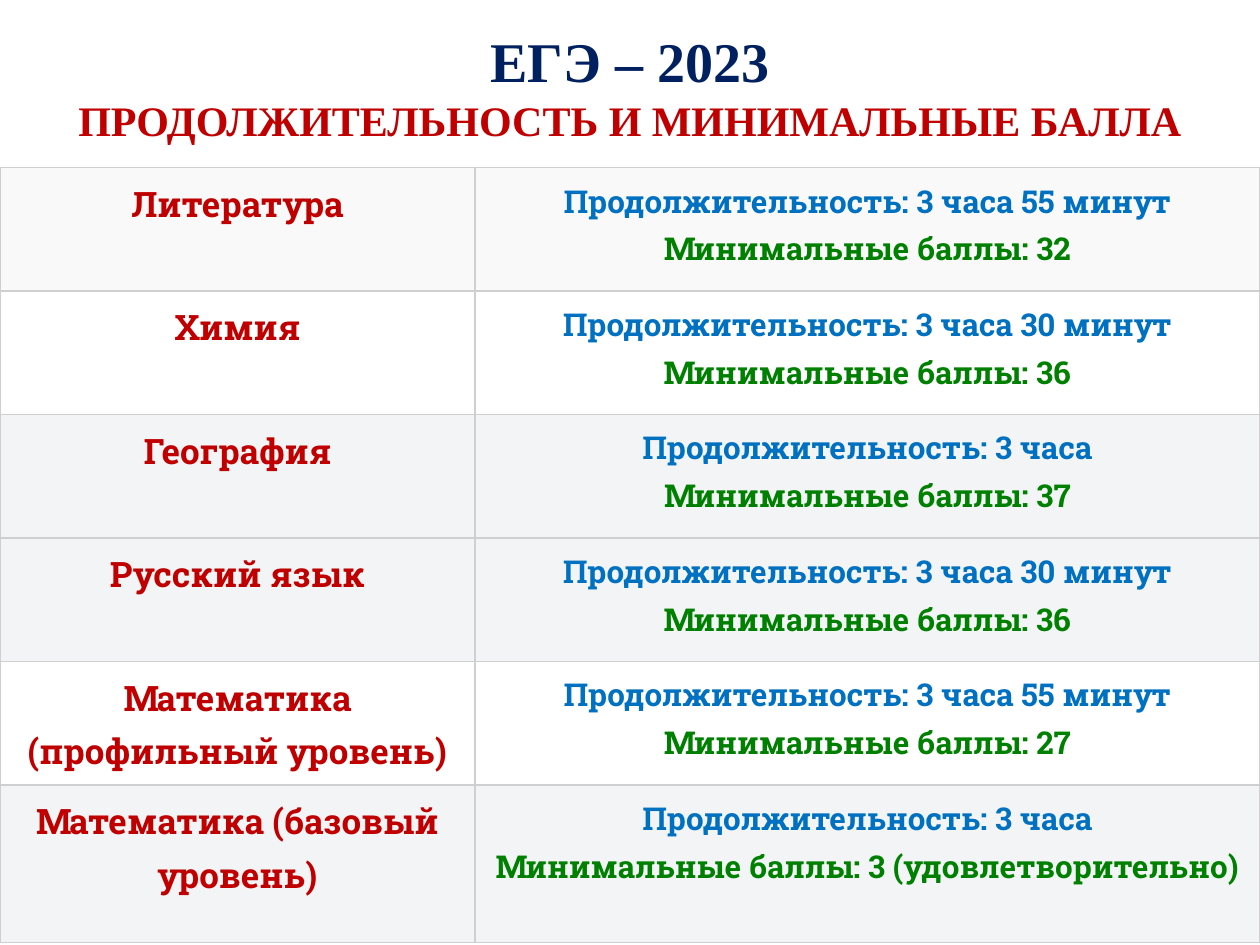
import dataclasses

import pptx
import pptx.dml.color
import pptx.enum.text
import pptx.oxml
import pptx.oxml.ns
import pptx.util

Inches = pptx.util.Inches
Pt = pptx.util.Pt

RED = "C00000"
BLUE = "0070C0"
GREEN = "008000"
NAVY = "002060"
GRID = "CFCFCF"
PALE = "F9F9FA"
WHITE = "FFFFFF"
GREY = "F3F4F5"
SLAB = "Roboto Slab"
SERIF = "Times New Roman"


@dataclasses.dataclass
class Exam:
    name: str
    time: str
    score: str
    fill: str


EXAMS = [
    Exam("Литература", "3 часа 55 минут", "32", PALE),
    Exam("Химия", "3 часа 30 минут", "36", WHITE),
    Exam("География", "3 часа", "37", GREY),
    Exam("Русский язык", "3 часа 30 минут", "36", GREY),
    Exam("Математика\n(профильный уровень)", "3 часа 55 минут", "27", WHITE),
    Exam("Математика (базовый уровень)", "3 часа", "3 (удовлетворительно)", GREY),
]


def color(code: str) -> pptx.dml.color.RGBColor:
    return pptx.dml.color.RGBColor.from_string(code)


def style(run, size: int, face: str, code: str) -> None:
    run.font.size = Pt(size)
    run.font.name = face
    run.font.bold = True
    run.font.color.rgb = color(code)


def border(cell, side: str, width: float) -> None:
    line = pptx.oxml.parse_xml(
        f'<a:ln{side} {pptx.oxml.ns.nsdecls("a")} w="{Pt(width)}">'
        f'<a:solidFill><a:srgbClr val="{GRID}"/></a:solidFill></a:ln{side}>'
    )
    cell._tc.get_or_add_tcPr().append(line)


def fill_cell(cell, text: str, size: int, codes: list[str], back: str, right: float) -> None:
    for side, width in (("L", 1), ("R", right), ("T", 1), ("B", 1)):
        border(cell, side, width)
    cell.fill.solid()
    cell.fill.fore_color.rgb = color(back)
    cell.margin_left = cell.margin_right = Inches(0.05)
    cell.margin_top = cell.margin_bottom = Inches(0.05)
    cell.text_frame.text = text
    for para in cell.text_frame.paragraphs:
        para.alignment = pptx.enum.text.PP_ALIGN.CENTER
        para.line_spacing = 1.15
        for run, code in zip(para.runs, codes):
            style(run, size, SLAB, code)


def add_title(slide) -> None:
    title = slide.shapes.title
    title.left, title.top = Inches(0.31), Inches(0.16)
    title.width, title.height = Inches(9.38), Inches(1.04)
    frame = title.text_frame
    frame.text = "ЕГЭ – 2023\nПРОДОЛЖИТЕЛЬНОСТЬ И МИНИМАЛЬНЫЕ БАЛЛА"
    frame.word_wrap = True
    frame.auto_size = pptx.enum.text.MSO_AUTO_SIZE.SHAPE_TO_FIT_TEXT
    frame.vertical_anchor = pptx.enum.text.MSO_ANCHOR.MIDDLE
    for para, size, code in zip(frame.paragraphs, (32, 24), (NAVY, RED)):
        para.alignment = pptx.enum.text.PP_ALIGN.CENTER
        style(para.runs[0], size, SERIF, code)


def add_exams(slide) -> None:
    table = slide.shapes.add_table(
        len(EXAMS), 2, 0, Inches(1.33), Inches(10), Inches(6.17)
    ).table
    table.columns[0].width = Inches(3.77)
    table.columns[1].width = Inches(6.23)
    for index, exam in enumerate(EXAMS):
        last = index == len(EXAMS) - 1
        table.rows[index].height = Inches(1.25 if last else 0.98)
        facts = f"Продолжительность: {exam.time}\vМинимальные баллы: {exam.score}"
        fill_cell(table.cell(index, 0), exam.name, 20, [RED], exam.fill, 1)
        fill_cell(table.cell(index, 1), facts, 18, [BLUE, GREEN], exam.fill, 1.5)


def main() -> None:
    deck = pptx.Presentation()
    deck.slide_width, deck.slide_height = Inches(10), Inches(7.5)
    slide = deck.slides.add_slide(deck.slide_layouts.get_by_name("Title Only"))
    add_title(slide)
    add_exams(slide)
    deck.save("out.pptx")


if __name__ == "__main__":
    main()
